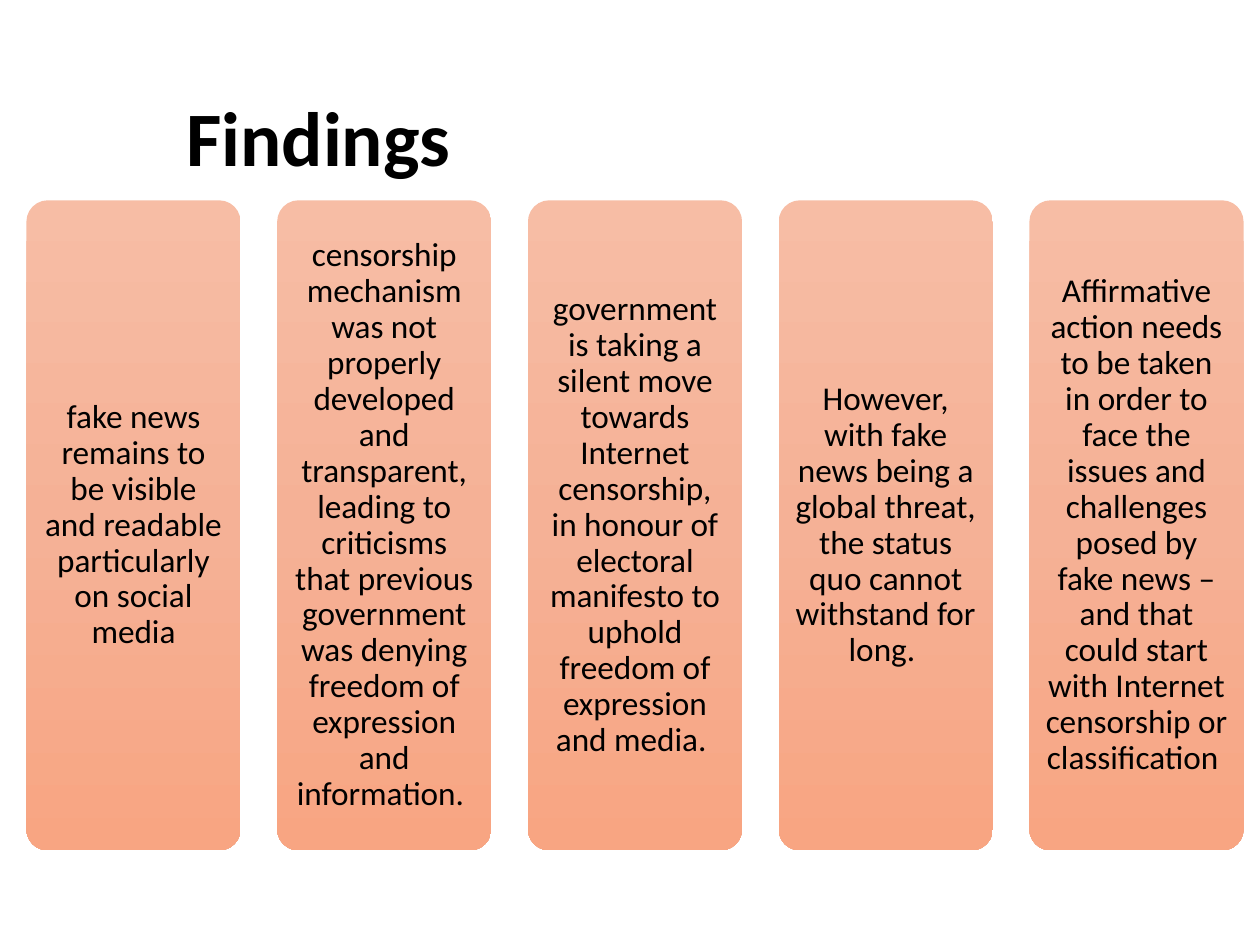
from copy import deepcopy
from dataclasses import dataclass

from pptx import Presentation
from pptx.dml.color import RGBColor
from pptx.enum.shapes import MSO_SHAPE
from pptx.enum.text import MSO_ANCHOR, MSO_AUTO_SIZE, PP_ALIGN
from pptx.oxml.ns import qn
from pptx.util import Inches, Pt

ROUNDED = MSO_SHAPE.ROUNDED_RECTANGLE
MIDDLE = MSO_ANCHOR.MIDDLE
NO_FIT = MSO_AUTO_SIZE.NONE
LEFT, CENTER = PP_ALIGN.LEFT, PP_ALIGN.CENTER
TITLE_ONLY = 5


@dataclass(frozen=True)
class Theme:
    font: str = "Calibri"
    text: RGBColor = RGBColor.from_string("000000")
    card_top: RGBColor = RGBColor.from_string("F7BDA5")
    card_middle: RGBColor = RGBColor.from_string("F5B196")
    card_bottom: RGBColor = RGBColor.from_string("F8A582")
    title_size: Pt = Pt(44)
    body_size: Pt = Pt(19)


THEME = Theme()

FINDINGS = [
    "fake news remains to be visible and readable particularly on social media",
    "censorship mechanism was not properly developed and transparent, leading to "
    "criticisms that previous government was denying freedom of expression and "
    "information. ",
    "government is taking a silent move towards Internet censorship, in honour of "
    "electoral manifesto to uphold freedom of expression and media. ",
    "However, with fake news being a global threat, the status quo cannot "
    "withstand for long. ",
    "Affirmative action needs to be taken in order to face the issues and "
    "challenges posed by fake news – and that could start with Internet "
    "censorship or classification ",
]


def apply_format(target, values):
    for name, value in values.items():
        setattr(target, name, value)


def write_text(shape, text, size, bold, align, inset_x, inset_y):
    frame = shape.text_frame
    frame.text = text
    apply_format(frame, {
        "word_wrap": True, "auto_size": NO_FIT, "vertical_anchor": MIDDLE,
        "margin_left": inset_x, "margin_right": inset_x,
        "margin_top": inset_y, "margin_bottom": inset_y,
    })
    para = frame.paragraphs[0]
    apply_format(para, {"alignment": align, "line_spacing": 0.9})
    span = para.runs[0]
    apply_format(span.font, {"name": THEME.font, "size": size, "bold": bold})
    span.font.color.rgb = THEME.text


def fill_card(card):
    card.fill.gradient()
    card.fill.gradient_angle = 270
    stop_list = card._element.spPr.find(qn("a:gradFill")).find(qn("a:gsLst"))
    stop_list.insert(1, deepcopy(stop_list[0]))
    colors = (THEME.card_top, THEME.card_middle, THEME.card_bottom)
    for stop, position, color in zip(card.fill.gradient_stops, (0, 0.5, 1), colors):
        stop.position = position
        stop.color.rgb = color


def place_title(page, box, text):
    title = page.shapes.title
    apply_format(title, dict(zip(("left", "top", "width", "height"), box)))
    write_text(title, text, THEME.title_size, True, LEFT, Inches(0.1), Inches(0.05))


def place_card(page, box, text):
    card = page.shapes.add_shape(ROUNDED, *box)
    card.adjustments[0] = 0.1
    card.shadow.inherit = False
    card.line.fill.background()
    fill_card(card)
    write_text(card, text, THEME.body_size, False, CENTER, Inches(0.08), Inches(0.08))


def place_findings(page, box, findings, gap):
    left, top, width, height = box
    card_width = (width - gap * (len(findings) - 1)) // len(findings)
    for index, text in enumerate(findings):
        card_left = left + index * (card_width + gap)
        place_card(page, (card_left, top, card_width, height), text)


def main():
    deck = Presentation()
    deck.slide_width, deck.slide_height = Inches(10), Inches(7.5)
    page = deck.slides.add_slide(deck.slide_layouts[TITLE_ONLY])
    title_box = (Inches(1.38), Inches(0.4), Inches(7.93), Inches(1.45))
    findings_box = (Inches(0.21), Inches(1.59), Inches(9.66), Inches(5.16))
    place_title(page, title_box, "Findings")
    place_findings(page, findings_box, FINDINGS, Inches(0.29))
    deck.save("out.pptx")


if __name__ == "__main__":
    main()
